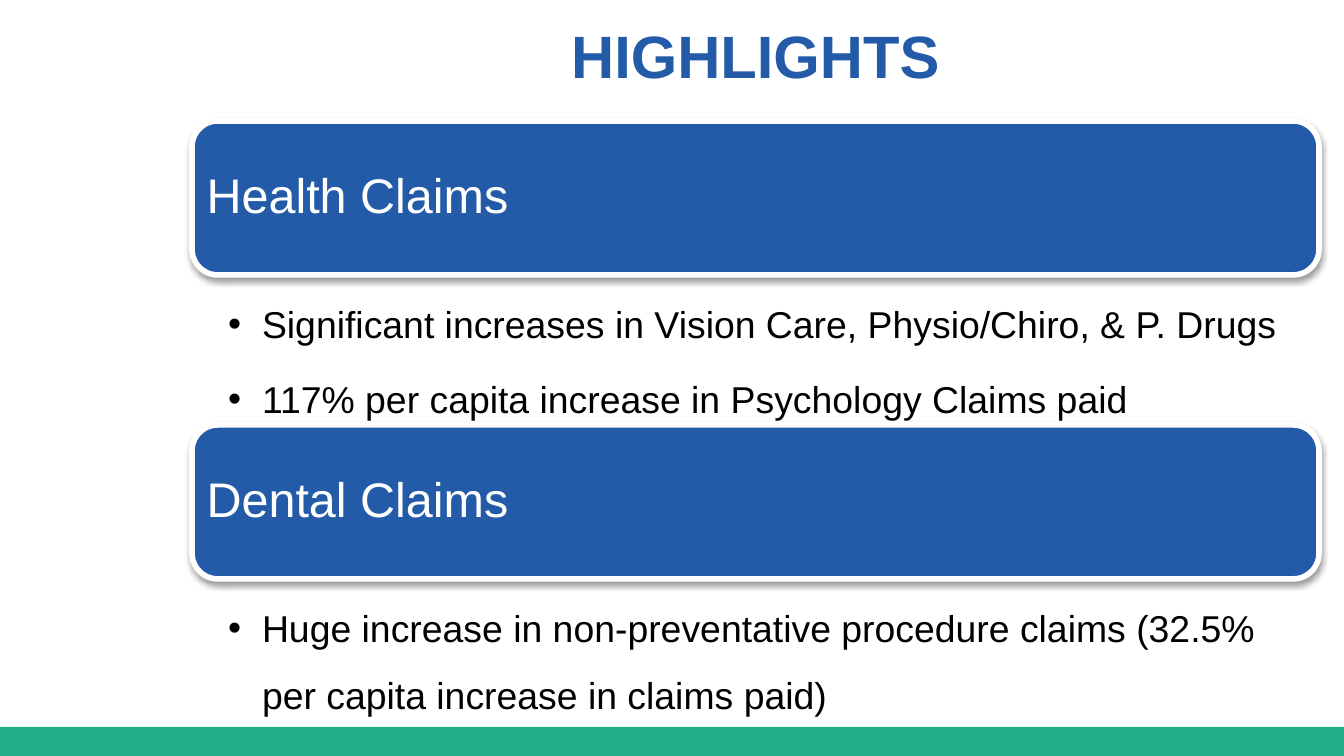
from lxml.etree import SubElement
from pptx import Presentation
from pptx.dml.color import RGBColor
from pptx.enum.shapes import MSO_SHAPE as Shape
from pptx.enum.text import MSO_ANCHOR as Anchor, PP_ALIGN as Align
from pptx.oxml.ns import qn
from pptx.util import Pt

EMU_PER_PX = 914400 / 134.4
COLORS = {"blue": "235BA8", "green": "22AE8A", "white": "FFFFFF", "black": "000000"}
SECTIONS = [
    ("Health Claims", [
        "Significant increases in Vision Care, Physio/Chiro, & P. Drugs",
        "117% per capita increase in Psychology Claims paid",
    ]),
    ("Dental Claims", [
        "Huge increase in non-preventative procedure claims "
        "(32.5% per capita increase in claims paid)",
    ]),
]


def px(length):
    return round(length * EMU_PER_PX)


def color(name):
    return RGBColor.from_string(COLORS[name])


def set_frame(frame, insets, anchor=Anchor.TOP):
    """Wrap the text and set insets in the order left, top, right, bottom."""
    frame.word_wrap = True
    frame.vertical_anchor = anchor
    (frame.margin_left, frame.margin_top,
     frame.margin_right, frame.margin_bottom) = map(px, insets)


def write(paragraph, text, size, ink, line_spacing, bold=False):
    paragraph.line_spacing = line_spacing
    run = paragraph.add_run()
    run.text = text
    run.font.name = "Arial"
    run.font.size = Pt(size)
    run.font.bold = bold
    run.font.color.rgb = color(ink)


def add_bullet(paragraph):
    props = paragraph._p.get_or_add_pPr()
    props.set("marL", str(px(34)))
    props.set("indent", str(-px(34)))
    SubElement(props, qn("a:buFont"), typeface="Arial")
    SubElement(props, qn("a:buChar"), char="•")


def add_soft_shadow(shape):
    effects = SubElement(shape._element.spPr, qn("a:effectLst"))
    shadow = SubElement(effects, qn("a:outerShdw"), blurRad=str(Pt(3.1)),
                        dist=str(Pt(1.6)), dir="5400000", rotWithShape="0")
    black = SubElement(shadow, qn("a:srgbClr"), val=COLORS["black"])
    SubElement(black, qn("a:alpha"), val="38000")


def add_footer(slide, x, y, w, h):
    bar = slide.shapes.add_shape(Shape.RECTANGLE, px(x), px(y), px(w), px(h))
    bar.shadow.inherit = False
    bar.fill.solid()
    bar.fill.fore_color.rgb = color("green")
    bar.line.fill.background()


def add_title(slide, x, y, w, h):
    frame = slide.shapes.add_textbox(px(x), px(y), px(w), px(h)).text_frame
    set_frame(frame, (13, 13, 13, 7))
    title = frame.paragraphs[0]
    title.alignment = Align.CENTER
    write(title, "HIGHLIGHTS", 32, "blue", 0.8, bold=True)


def add_banner(slide, heading, x, y, w, h):
    banner = slide.shapes.add_shape(Shape.ROUNDED_RECTANGLE, px(x), px(y), px(w), px(h))
    banner.fill.solid()
    banner.fill.fore_color.rgb = color("blue")
    banner.line.color.rgb = color("white")
    banner.line.width = Pt(3)
    add_soft_shadow(banner)
    set_frame(banner.text_frame, (7, 7, 7, 7), Anchor.MIDDLE)
    paragraph = banner.text_frame.paragraphs[0]
    paragraph.alignment = Align.LEFT
    write(paragraph, heading, 26, "white", 0.9)


def add_points(slide, points, x, y, w, h):
    frame = slide.shapes.add_textbox(px(x), px(y), px(w), px(h)).text_frame
    set_frame(frame, (36, 4, 21, 4))
    for index, point in enumerate(points):
        paragraph = frame.add_paragraph() if index else frame.paragraphs[0]
        paragraph.level = 1
        paragraph.space_after = Pt(4)
        add_bullet(paragraph)
        write(paragraph, point, 20, "black", 1.5)


def add_section(slide, heading, points, x, y, w, h):
    banner_height = 154
    add_banner(slide, heading, x, y, w, banner_height)
    add_points(slide, points, x, y + banner_height, w, h - banner_height)


def main():
    deck = Presentation()
    deck.slide_width, deck.slide_height = px(1344), px(756)
    slide = deck.slides.add_slide(deck.slide_layouts[6])
    left, width, top, pitch = 192, 1127, 121, 304
    add_footer(slide, 0, 727, 1344, 29)
    add_title(slide, left, 20, width, 105)
    for index, (heading, points) in enumerate(SECTIONS):
        section_height = pitch if index == 0 else 290
        add_section(slide, heading, points, left, top + index * pitch, width, section_height)
    deck.save("out.pptx")


if __name__ == "__main__":
    main()
